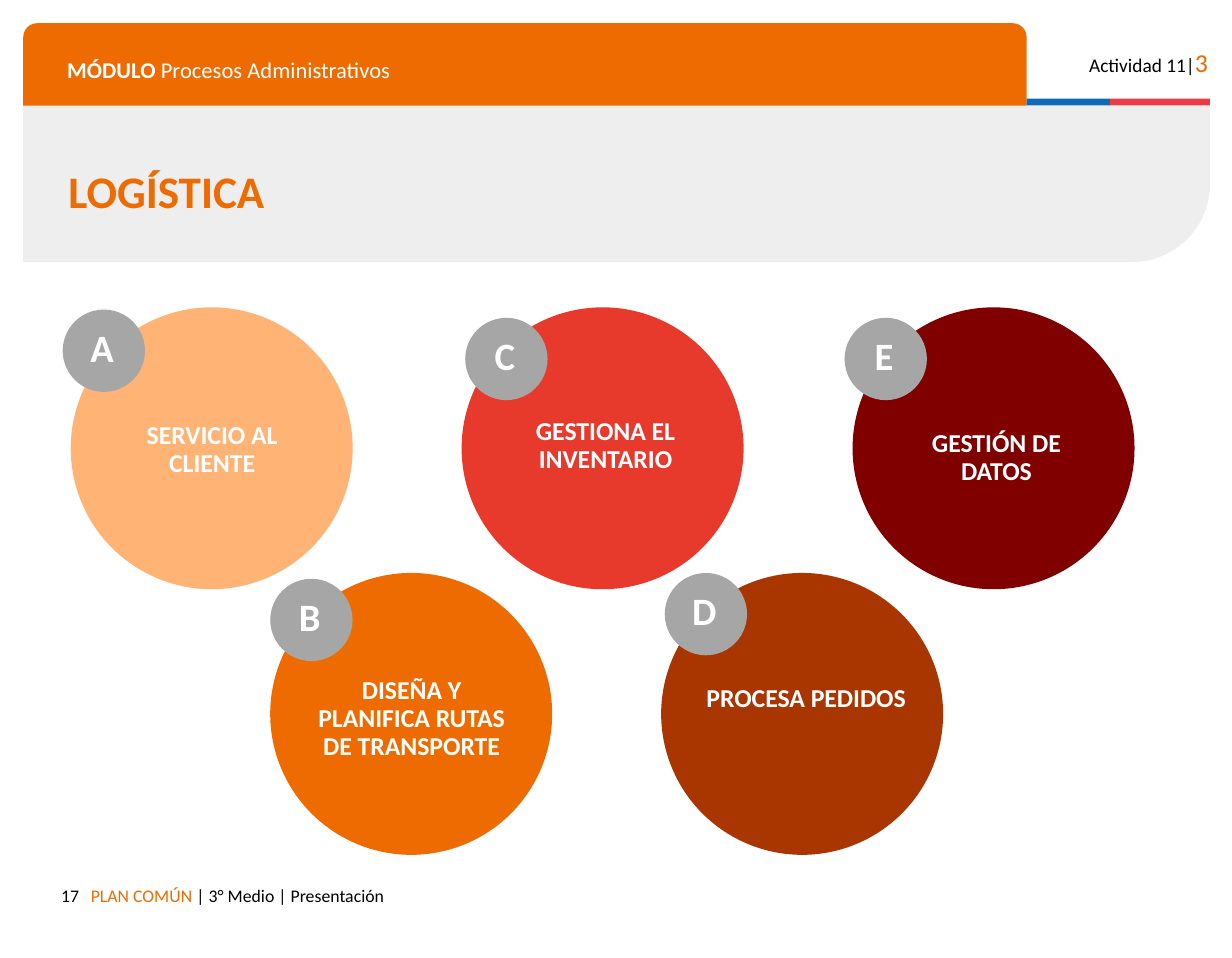
from pptx import Presentation
from pptx.dml.color import RGBColor
from pptx.enum.shapes import MSO_SHAPE
from pptx.enum.text import MSO_ANCHOR, MSO_AUTO_SIZE, PP_ALIGN
from pptx.util import Pt

ORANGE = RGBColor(0xED, 0x6B, 0x00)
BLUE = RGBColor(0x0F, 0x69, 0xB4)
RED = RGBColor(0xEB, 0x3C, 0x46)
PALE = RGBColor(0xEE, 0xEE, 0xEE)
GREY = RGBColor(0xA6, 0xA6, 0xA6)
WHITE = RGBColor(0xFF, 0xFF, 0xFF)
BLACK = RGBColor(0, 0, 0)
PEACH = RGBColor(0xFF, 0xB3, 0x75)
CORAL = RGBColor(0xE7, 0x3A, 0x2D)
MAROON = RGBColor(0x80, 0, 0)
RUST = RGBColor(0xA9, 0x35, 0x01)

CIRCLE = 175
BADGE = 51.1
LABEL_WIDTH = 131
COLUMN_STEP = 121.32
ROW_STEP = 164.9

STEPS = [
    ("A", "SERVICIO AL CLIENTE", PEACH, (-5, 1.4), (22.3, 67.7)),
    ("B", "DISEÑA Y PLANIFICA RUTAS DE TRANSPORTE", ORANGE, (0, 3.6), (22.3, 61.2)),
    ("C", "GESTIONA EL INVENTARIO", CORAL, (2.2, 6.5), (23.8, 65.5)),
    ("D", "PROCESA PEDIDOS", RUST, (2.2, 0), (24.5, 66.2)),
    ("E", "GESTIÓN DE DATOS", MAROON, (-5, 6.5), (23.8, 72.7)),
]


def set_format(target, values):
    for name, value in values.items():
        setattr(target, name, value)


def write(tf, runs, align=PP_ALIGN.LEFT, spacing=1.0, inset=7.2, anchor=MSO_ANCHOR.TOP):
    set_format(tf, {"word_wrap": True, "auto_size": MSO_AUTO_SIZE.NONE,
                    "vertical_anchor": anchor, "margin_left": Pt(inset),
                    "margin_right": Pt(inset), "margin_top": Pt(inset),
                    "margin_bottom": Pt(inset)})
    p = tf.paragraphs[0]
    set_format(p, {"alignment": align, "line_spacing": spacing})
    for text, size, color, bold in runs:
        r = p.add_run()
        r.text = text
        set_format(r.font, {"name": "Calibri", "size": Pt(size), "bold": bold})
        r.font.color.rgb = color


def add_text(s, box, runs, **options):
    sp = s.shapes.add_textbox(*map(Pt, box))
    write(sp.text_frame, runs, **options)


def add_block(s, kind, box, color):
    sp = s.shapes.add_shape(kind, *map(Pt, box))
    sp.shadow.inherit = False
    sp.fill.solid()
    sp.fill.fore_color.rgb = color
    sp.line.fill.background()
    return sp


def add_header(s, left, top, width, height):
    tab_width = 622.8
    tab = add_block(s, MSO_SHAPE.ROUND_2_SAME_RECTANGLE, (left, top, tab_width, height), ORANGE)
    tab.adjustments[0] = 0.17
    stripe_left, stripe_top = left + tab_width, top + height - 4.3
    for stripe_width, color in ((51.9, BLUE), (61.9, RED)):
        add_block(s, MSO_SHAPE.RECTANGLE, (stripe_left, stripe_top, stripe_width, 4.3), color)
        stripe_left += stripe_width
    add_text(s, (left + 20.2, top + 13, 586, 29.5),
             [("MÓDULO", 14, WHITE, True), (" Procesos Administrativos", 14, WHITE, False)])
    add_text(s, (left + width - 86.4, top + 7.2, 92.2, 31),
             [("Actividad 11|", 12, BLACK, False), ("3", 16, ORANGE, False)],
             align=PP_ALIGN.RIGHT)


def add_title(s, left, top, width, height):
    panel_box = (left + (width - height) / 2, top - (width - height) / 2, height, width)
    panel = add_block(s, MSO_SHAPE.ROUND_1_RECTANGLE, panel_box, PALE)
    panel.rotation = 90
    panel.adjustments[0] = 0.5
    title = s.shapes.title
    set_format(title, {"left": Pt(left + 20.9), "top": Pt(top + 34.6),
                       "width": Pt(width - 31.5), "height": Pt(42.5)})
    write(title.text_frame, [("LOGÍSTICA", 28, ORANGE, True)],
          spacing=0.8, anchor=MSO_ANCHOR.MIDDLE)
    s.shapes._spTree.append(title._element)


def add_steps(s, left, top):
    badges = []
    for i, (letter, label, color, badge, text) in enumerate(STEPS):
        row = i % 2
        x = left + i * COLUMN_STEP + row * 2.5
        y = top + row * ROW_STEP
        add_block(s, MSO_SHAPE.OVAL, (x, y, CIRCLE, CIRCLE), color)
        add_text(s, (x + text[0], y + text[1], LABEL_WIDTH, 60),
                 [(label, 16, WHITE, True)],
                 align=PP_ALIGN.CENTER, spacing=0.9, inset=3.6)
        badges.append((letter, x + badge[0], y + badge[1]))
    for letter, x, y in badges:
        sp = add_block(s, MSO_SHAPE.OVAL, (x, y, BADGE, BADGE), GREY)
        write(sp.text_frame, [(letter, 24, WHITE, True)],
              align=PP_ALIGN.CENTER, inset=0, anchor=MSO_ANCHOR.MIDDLE)
        set_format(sp.text_frame, {"margin_bottom": Pt(5), "margin_right": Pt(2)})


def add_footer(s, left, top, width, height):
    add_text(s, (left, top, 36.2, height), [("17", 11, BLACK, False)], align=PP_ALIGN.RIGHT)
    add_text(s, (left + 29.3, top, width - 29.3, height),
             [("PLAN COMÚN ", 11, ORANGE, False),
              ("| 3° Medio | Presentación", 11, BLACK, False)])


def main():
    prs = Presentation()
    set_format(prs, {"slide_width": Pt(764.64), "slide_height": Pt(594.72)})
    s = prs.slides.add_slide(prs.slide_layouts[5])
    add_title(s, 14.4, 65.5, 736.6, 97.2)
    add_header(s, 14.4, 14.4, 736.6, 51.1)
    add_steps(s, 43.9, 190.8)
    add_footer(s, 20, 542.2, 543.8, 25.2)
    prs.save("out.pptx")


if __name__ == "__main__":
    main()
